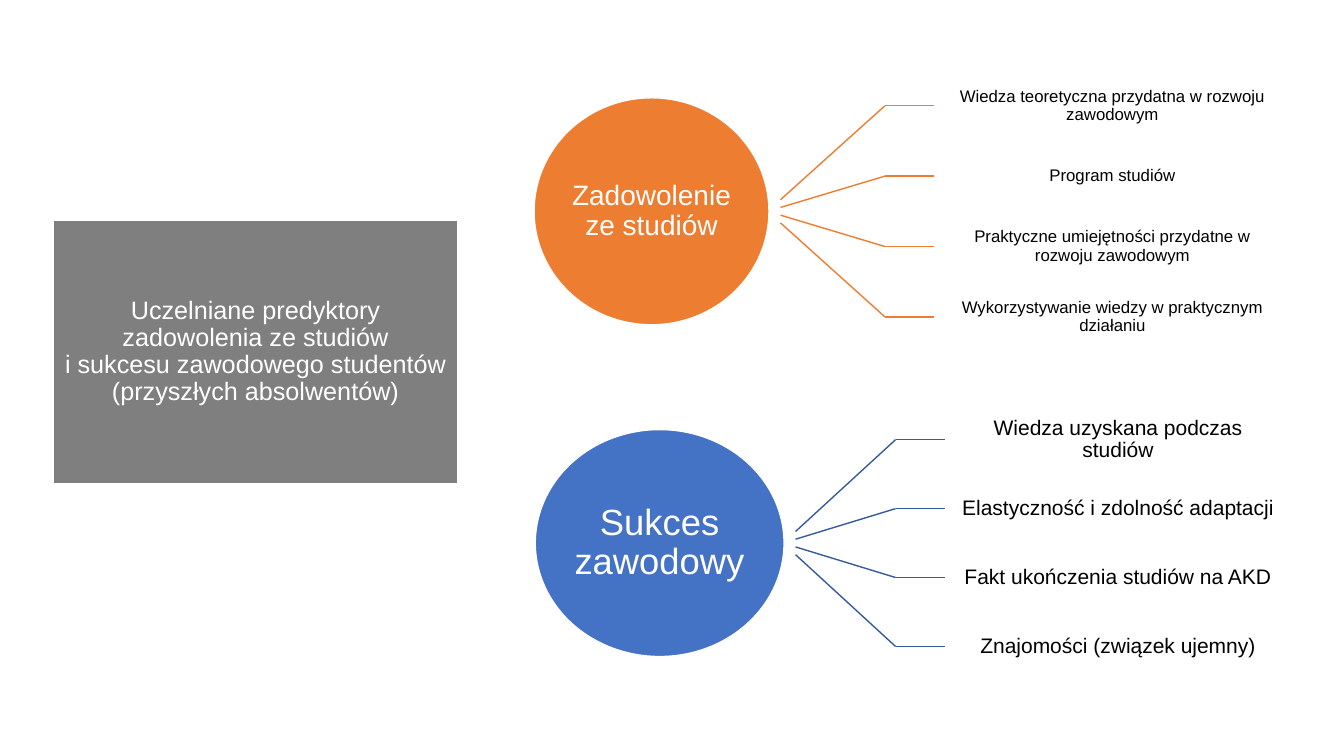
import pptx
import pptx.dml.color
import pptx.enum.shapes
import pptx.enum.text
import pptx.oxml.ns
import pptx.util
from lxml import etree

Cm = pptx.util.Cm
Pt = pptx.util.Pt
ShapeKind = pptx.enum.shapes.MSO_SHAPE
qn = pptx.oxml.ns.qn

CIRCLE_HEIGHT = 5.72
CIRCLE_GAP = 0.29   # between circle and fan of lines
FAN_STEP = 0.195    # between starting points of the fan
STUB_LENGTH = 1.25  # horizontal line in front of a label


def color(hex_string):
    return pptx.dml.color.RGBColor.from_string(hex_string)


def write(shape, text, size, text_color, inset=None):
    text_frame = shape.text_frame
    text_frame.word_wrap = True
    text_frame.vertical_anchor = pptx.enum.text.MSO_ANCHOR.MIDDLE
    if inset is not None:
        text_frame.margin_left = text_frame.margin_right = Cm(inset)
        text_frame.margin_top = text_frame.margin_bottom = Cm(inset)
    text_frame.text = text
    for paragraph in text_frame.paragraphs:
        paragraph.alignment = pptx.enum.text.PP_ALIGN.CENTER
        paragraph.line_spacing = 0.9
        for run in paragraph.runs:
            run.font.name = "Arial"
            run.font.size = Pt(size)
            run.font.color.rgb = color(text_color)


def add_filled_shape(slide, kind, box, fill, line_width):
    shape = slide.shapes.add_shape(kind, *map(Cm, box))
    shape.shadow.inherit = False
    shape.fill.solid()
    shape.fill.fore_color.rgb = color(fill)
    shape.line.color.rgb = color("FFFFFF")
    shape.line.width = Pt(line_width)
    return shape


def add_line(slide, start, end, line_color):
    connector = slide.shapes.add_connector(
        pptx.enum.shapes.MSO_CONNECTOR.STRAIGHT, *map(Cm, start + end))
    connector.line.color.rgb = color(line_color)
    connector.line.width = Pt(1)
    etree.SubElement(connector._element.spPr, qn("a:effectLst"))
    return connector


def add_title_panel(slide, box, text):
    panel = add_filled_shape(slide, ShapeKind.RECTANGLE, box, "000000", 2)
    # Half-transparent black
    fill_color = panel._element.spPr.find(qn("a:solidFill"))[0]
    etree.SubElement(fill_color, qn("a:alpha"), val="50000")
    write(panel, text, 18, "FFFFFF")


def add_predictor_fan(slide, box, circle_width, label_width, name, name_size,
                      labels, label_size, label_inset, fill, line_color):
    left, top, width, height = box
    middle = top + height / 2
    row_height = height / len(labels)
    label_left = left + width - label_width
    bend = label_left - STUB_LENGTH
    fan_left = left + circle_width + CIRCLE_GAP

    # Circle with the outcome
    circle = add_filled_shape(
        slide, ShapeKind.OVAL,
        (left, middle - CIRCLE_HEIGHT / 2, circle_width, CIRCLE_HEIGHT), fill, 1)
    write(circle, name, name_size, "FFFFFF", 0)

    # Predictors, each with a bent line
    for index, text in enumerate(labels):
        row_top = top + index * row_height
        row_middle = row_top + row_height / 2
        fan_top = middle + (index - (len(labels) - 1) / 2) * FAN_STEP
        label = slide.shapes.add_textbox(
            *map(Cm, (label_left, row_top, label_width, row_height)))
        write(label, text, label_size, "000000", label_inset)
        add_line(slide, (fan_left, fan_top), (bend, row_middle), line_color)
        stub = add_line(slide, (bend, row_middle), (label_left, row_middle), line_color)
        stub.end_connect(label, 1)


def main():
    presentation = pptx.Presentation()
    presentation.slide_width = Cm(33.87)
    presentation.slide_height = Cm(19.05)
    slide = presentation.slides.add_slide(presentation.slide_layouts[6])

    add_title_panel(
        slide, (1.32, 5.53, 10.24, 6.67),
        "Uczelniane predyktory zadowolenia ze studiów\v"
        "i sukcesu zawodowego studentów (przyszłych absolwentów)")

    # Satisfaction with studies
    add_predictor_fan(
        slide, (13.46, 1.78, 19.06, 7.09), 5.92, 8.97,
        "Zadowolenie ze studiów", 20,
        ["Wiedza teoretyczna przydatna w rozwoju zawodowym",
         "Program studiów",
         "Praktyczne umiejętności przydatne w rozwoju zawodowym",
         "Wykorzystywanie wiedzy w praktycznym działaniu"],
        12, 0.23, "ED7D31", "ED7D31")

    # Career success
    add_predictor_fan(
        slide, (13.49, 10.21, 19.04, 6.95), 6.27, 8.71,
        "Sukces zawodowy", 26,
        ["Wiedza uzyskana podczas studiów",
         "Elastyczność i zdolność adaptacji",
         "Fakt ukończenia studiów na AKD",
         "Znajomości (związek ujemny)"],
        15, 0.3, "4472C4", "365B9D")

    presentation.save("out.pptx")


if __name__ == "__main__":
    main()
